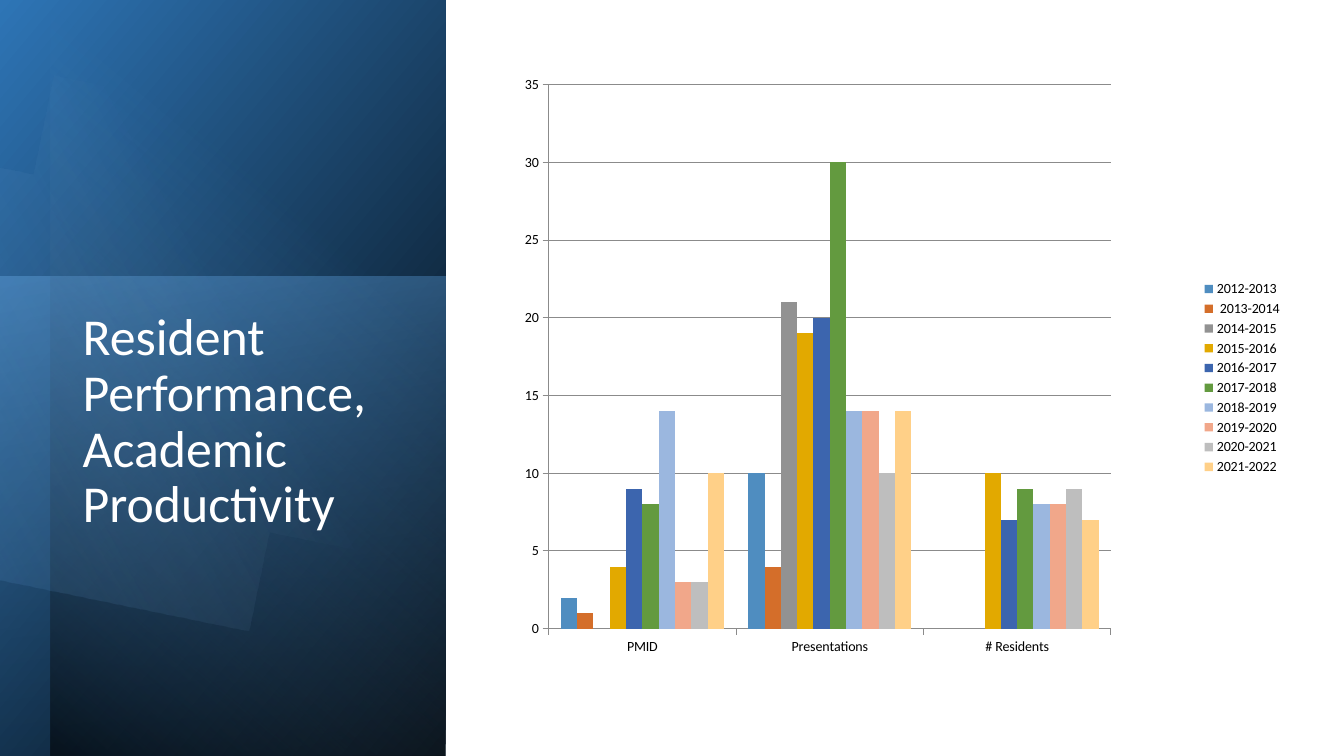
from math import cos, radians, sin

from pptx import Presentation
from pptx.chart.data import CategoryChartData
from pptx.dml.color import RGBColor
from pptx.enum.chart import XL_CHART_TYPE, XL_LEGEND_POSITION, XL_TICK_MARK
from pptx.enum.shapes import MSO_SHAPE
from pptx.enum.text import MSO_ANCHOR, MSO_AUTO_SIZE, PP_ALIGN
from pptx.oxml import parse_xml
from pptx.oxml.ns import nsdecls, qn
from pptx.util import Inches, Pt

FONT = "Calibri"
COLORS = {
    "black": "000000", "white": "FFFFFF", "grid": "8B8B8B",
    "blue": "2E75B6", "sky": "5B9BD5", "navy": "1F4E79", "pale": "9DC3E6",
}
TITLE = "Resident Performance, Academic Productivity"
TITLE_BOX = (0.72, 3.03, 3.15, 3.36)

# Gradient stops are (position %, color, opacity %); angles run clockwise.
PANELS = [
    {"box": (-1.55, 1.55, 7.52, 4.42), "rotation": 90, "flip": True, "angle": 50,
     "stops": [(0, "black", 100), (100, "blue", 100)]},
    {"box": (-0.17, 2.91, 4.76, 4.42), "rotation": 270, "flip": False, "angle": 170,
     "stops": [(0, "sky", 50), (100, "navy", 0)]},
    {"box": (-1.29, 1.79, 7.5, 3.92), "rotation": 270, "flip": True, "angle": 140,
     "stops": [(0, "black", 59), (69, "sky", 0)]},
]
DISC = {"center": (1.43, 3.47), "radius": 2.63, "half_arc": 123,
        "pivot": (1.81, 3.55), "rotation": 101.6, "angle": 50,
        "stops": [(39, "pale", 0), (100, "blue", 26)]}

CHART_BOX = (4.92, 0.51, 7.9, 6.48)
PLOT_AREA = {"x": 0.066, "y": 0.051, "w": 0.706, "h": 0.833}
CATEGORIES = ["PMID", "Presentations", "# Residents"]
SERIES = [
    ("2012-2013", (2, 10, None), "4F8DC0"),
    (" 2013-2014", (1, 4, None), "D46E2A"),
    ("2014-2015", (0, 21, None), "929292"),
    ("2015-2016", (4, 19, 10), "E2A900"),
    ("2016-2017", (9, 20, 7), "3C65AE"),
    ("2017-2018", (8, 30, 9), "639A3F"),
    ("2018-2019", (14, 14, 8), "9BB7DF"),
    ("2019-2020", (3, 14, 8), "F1A78A"),
    ("2020-2021", (3, 10, 9), "BEBEBE"),
    ("2021-2022", (10, 14, 7), "FFD088"),
]


def inches(values):
    return [Inches(value) for value in values]


def set_all(target, values):
    for name, value in values.items():
        setattr(target, name, value)


def style_gradient(shape, stops, angle):
    """Give the shape a linear gradient with opacity, no line and no shadow."""
    shape.shadow.inherit = False
    shape.line.fill.background()
    shape.fill.background()
    stop_xml = "".join(
        f'<a:gs pos="{position * 1000}"><a:srgbClr val="{COLORS[color]}">'
        f'<a:alpha val="{opacity * 1000}"/></a:srgbClr></a:gs>'
        for position, color, opacity in stops)
    gradient = parse_xml(
        f'<a:gradFill {nsdecls("a")} rotWithShape="1"><a:gsLst>{stop_xml}</a:gsLst>'
        f'<a:lin ang="{angle * 60000}" scaled="0"/></a:gradFill>')
    properties = shape._element.spPr
    properties.replace(properties.find(qn("a:noFill")), gradient)


def add_panel(slide, panel):
    shape = slide.shapes.add_shape(MSO_SHAPE.RECTANGLE, *inches(panel["box"]))
    shape.rotation = panel["rotation"]
    if panel["flip"]:
        shape._element.spPr.find(qn("a:xfrm")).set("flipH", "1")
    style_gradient(shape, panel["stops"], panel["angle"])


def add_disc(slide):
    """Draw a disc cut at the slide's left edge, turned so its gradient turns too."""
    turn = radians(-DISC["rotation"])
    pivot_x, pivot_y = DISC["pivot"]
    points = []
    for degrees in range(-DISC["half_arc"], DISC["half_arc"] + 1, 3):
        x = DISC["center"][0] + DISC["radius"] * cos(radians(degrees)) - pivot_x
        y = DISC["center"][1] + DISC["radius"] * sin(radians(degrees)) - pivot_y
        points.append((pivot_x + x * cos(turn) - y * sin(turn),
                       pivot_y + x * sin(turn) + y * cos(turn)))
    builder = slide.shapes.build_freeform(*points[0], scale=Inches(1))
    builder.add_line_segments(points[1:], close=True)
    shape = builder.convert_to_shape()
    shape.rotation = DISC["rotation"]
    style_gradient(shape, DISC["stops"], DISC["angle"])


def add_title(slide):
    title = slide.shapes.title
    slide.shapes._spTree.append(title._element)  # bring in front of the panels
    set_all(title, dict(zip(("left", "top", "width", "height"), inches(TITLE_BOX))))
    frame = title.text_frame
    frame.text = TITLE
    set_all(frame, {"word_wrap": True, "auto_size": MSO_AUTO_SIZE.NONE,
                    "vertical_anchor": MSO_ANCHOR.TOP})
    paragraph = frame.paragraphs[0]
    set_all(paragraph, {"alignment": PP_ALIGN.LEFT, "line_spacing": 0.9})
    font = paragraph.runs[0].font
    set_all(font, {"name": FONT, "size": Pt(37)})
    font.color.rgb = RGBColor.from_string(COLORS["white"])


def add_productivity_chart(slide):
    data = CategoryChartData()
    data.categories = CATEGORIES
    for name, values, _ in SERIES:
        data.add_series(name, values)
    chart = slide.shapes.add_chart(
        XL_CHART_TYPE.COLUMN_CLUSTERED, *inches(CHART_BOX), data).chart
    set_all(chart, {"has_title": False, "has_legend": True})
    set_all(chart.font, {"name": FONT, "size": Pt(10)})
    chart.font.color.rgb = RGBColor.from_string(COLORS["black"])
    set_all(chart.legend, {"position": XL_LEGEND_POSITION.RIGHT,
                           "include_in_layout": False})

    plot = chart.plots[0]
    set_all(plot, {"gap_width": 150, "overlap": 0, "vary_by_categories": False})
    for series, (_, _, color) in zip(plot.series, SERIES):
        series.format.fill.solid()
        series.format.fill.fore_color.rgb = RGBColor.from_string(color)

    set_all(chart.value_axis, {"minimum_scale": 0, "maximum_scale": 35,
                               "major_unit": 5, "has_major_gridlines": True})
    lines = [chart.value_axis.major_gridlines.format.line]
    for axis in (chart.category_axis, chart.value_axis):
        axis.major_tick_mark = XL_TICK_MARK.OUTSIDE
        lines.append(axis.format.line)
    for line in lines:
        line.width = Pt(0.75)
        line.color.rgb = RGBColor.from_string(COLORS["grid"])

    plot_area = chart._chartSpace.chart.plotArea
    for old_layout in plot_area.findall(qn("c:layout")):
        plot_area.remove(old_layout)
    modes = '<c:xMode val="edge"/><c:yMode val="edge"/>'
    sizes = "".join(f'<c:{key} val="{value}"/>' for key, value in PLOT_AREA.items())
    plot_area.insert(0, parse_xml(
        f'<c:layout {nsdecls("c")}><c:manualLayout><c:layoutTarget val="inner"/>'
        f"{modes}{sizes}</c:manualLayout></c:layout>"))


def main():
    presentation = Presentation()
    set_all(presentation, {"slide_width": Inches(13.33), "slide_height": Inches(7.5)})
    slide = presentation.slides.add_slide(presentation.slide_layouts[5])
    for panel in PANELS:
        add_panel(slide, panel)
    add_disc(slide)
    add_title(slide)
    add_productivity_chart(slide)
    presentation.save("out.pptx")


if __name__ == "__main__":
    main()
